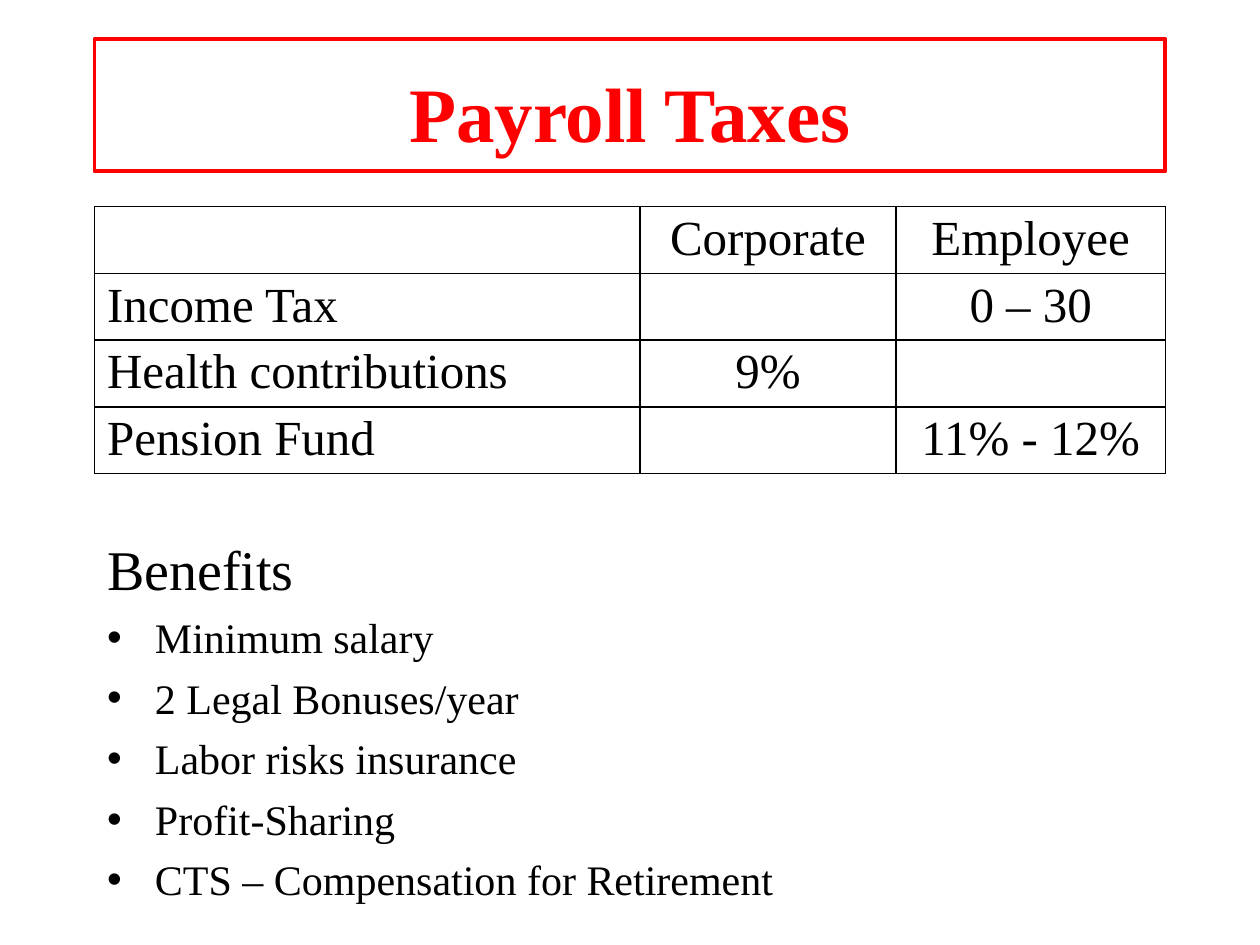
from lxml import etree
from pptx import Presentation
from pptx.dml.color import RGBColor
from pptx.enum.text import MSO_ANCHOR, MSO_AUTO_SIZE, PP_ALIGN
from pptx.oxml.ns import qn
from pptx.util import Inches, Pt

LEFT, CENTER = PP_ALIGN.LEFT, PP_ALIGN.CENTER
MIDDLE, TOP = MSO_ANCHOR.MIDDLE, MSO_ANCHOR.TOP
NO_FIT = MSO_AUTO_SIZE.NONE

FONT = "Times New Roman"
COLORS = {"accent": "FF0000", "text": "000000"}
RATES = [
    ["", "Corporate", "Employee"],
    ["Income Tax", "", "0 – 30"],
    ["Health contributions", "9%", ""],
    ["Pension Fund", "", "11% - 12%"],
]
COL_WIDTHS = [4.33, 2.03, 2.14]
ROW_HEIGHT = 0.53
BENEFITS = [
    "Minimum salary",
    "2 Legal Bonuses/year",
    "Labor risks insurance",
    "Profit-Sharing",
    "CTS – Compensation for Retirement",
]


def rgb(name):
    return RGBColor.from_string(COLORS[name])


def write(p, text, size, color="text", bold=False, align=LEFT):
    p.alignment = align
    r = p.add_run()
    r.text = text
    r.font.name = FONT
    r.font.size = Pt(size)
    r.font.bold = bold
    r.font.color.rgb = rgb(color)


def place(sp, x, y, w, h, anchor):
    sp.left, sp.top, sp.width, sp.height = map(Inches, (x, y, w, h))
    tf = sp.text_frame
    tf.auto_size = NO_FIT
    tf.word_wrap = True
    tf.vertical_anchor = anchor
    return tf


def set_bullet(p, char=None):
    pPr = p._p.get_or_add_pPr()
    pPr.set("marL", str(Inches(0.38)))
    pPr.set("indent", str(Inches(-0.38)))
    if char:
        etree.SubElement(pPr, qn("a:buChar")).set("char", char)
    else:
        etree.SubElement(pPr, qn("a:buNone"))


def set_borders(cell):
    tcPr = cell._tc.get_or_add_tcPr()
    for i, side in enumerate(("lnL", "lnR", "lnT", "lnB")):
        ln = etree.Element(qn(f"a:{side}"), w=str(Pt(1)))
        fill = etree.SubElement(ln, qn("a:solidFill"))
        etree.SubElement(fill, qn("a:srgbClr")).set("val", COLORS["text"])
        tcPr.insert(i, ln)


def add_title(slide):
    sp = slide.shapes.title
    tf = place(sp, 0.75, 0.31, 8.5, 1.05, MIDDLE)
    tf.margin_top = Inches(0.15)
    sp.line.color.rgb = rgb("accent")
    sp.line.width = Pt(2.25)
    write(tf.paragraphs[0], "Payroll Taxes", 44, "accent", True, CENTER)


def add_rates(slide):
    frame = slide.shapes.add_table(
        len(RATES), len(COL_WIDTHS), Inches(0.75), Inches(1.64),
        Inches(sum(COL_WIDTHS)), Inches(ROW_HEIGHT * len(RATES)))
    table = frame.table
    table.first_row = table.horz_banding = False
    for col, width in zip(table.columns, COL_WIDTHS):
        col.width = Inches(width)
    for i, row in enumerate(RATES):
        for j, text in enumerate(row):
            cell = table.cell(i, j)
            cell.margin_top = cell.margin_bottom = Inches(0.04)
            cell.fill.background()
            set_borders(cell)
            if text:
                write(cell.text_frame.paragraphs[0], text, 28,
                      align=CENTER if j else LEFT)


def add_benefits(slide):
    tf = place(slide.placeholders[1], 0.75, 4.19, 6.36, 3.31, TOP)
    p = tf.paragraphs[0]
    set_bullet(p)
    p.space_before = Pt(0)
    write(p, "Benefits", 32)
    for text in BENEFITS:
        p = tf.add_paragraph()
        set_bullet(p, "•")
        p.space_before = Pt(5.8)
        write(p, text, 24)


def main():
    prs = Presentation()
    prs.slide_width, prs.slide_height = Inches(10), Inches(7.5)
    slide = prs.slides.add_slide(prs.slide_layouts[1])
    add_title(slide)
    add_rates(slide)
    add_benefits(slide)
    prs.save("out.pptx")


if __name__ == "__main__":
    main()
